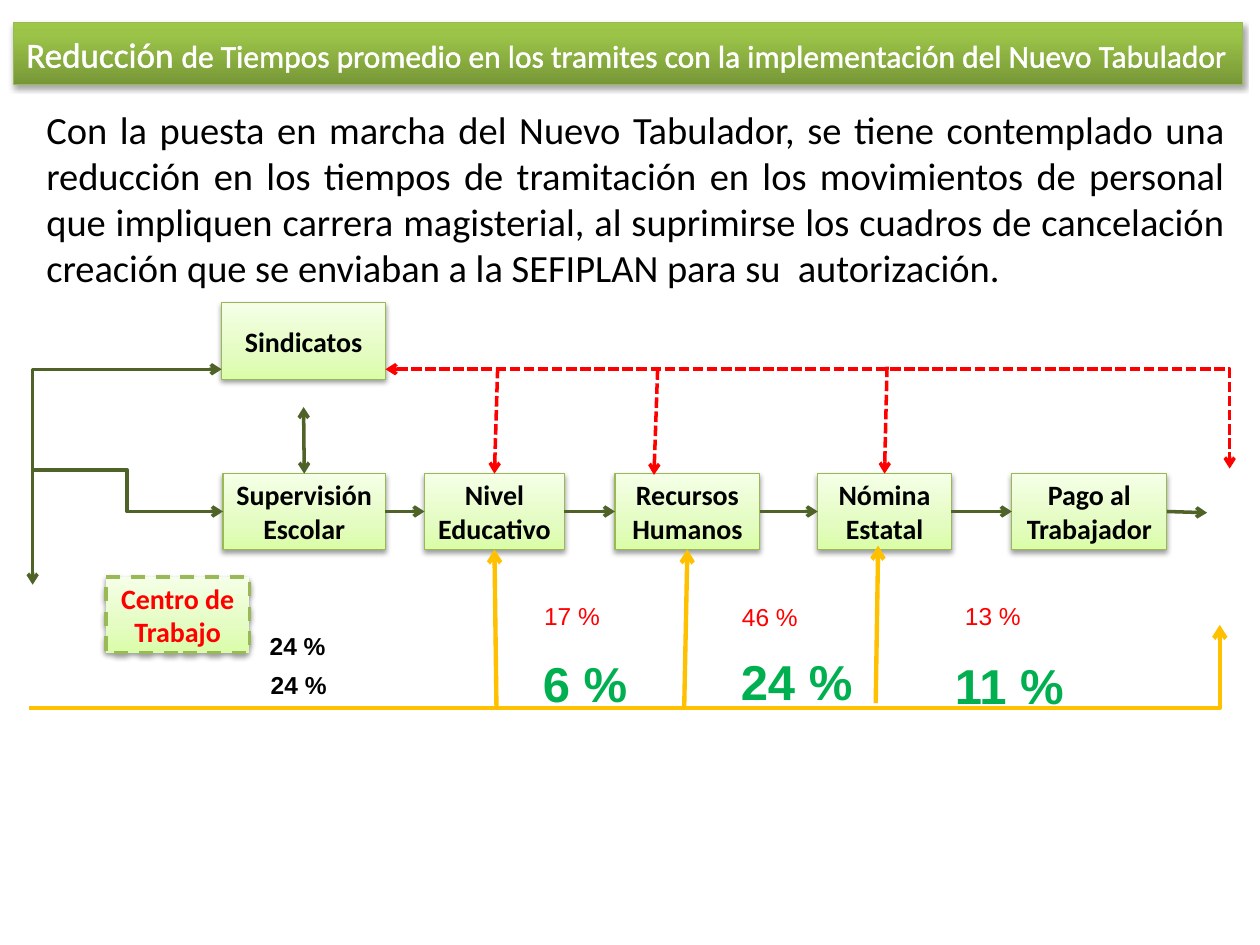
from lxml import etree
from pptx import Presentation
from pptx.dml.color import RGBColor
from pptx.enum import dml, shapes, text
from pptx.oxml import ns
from pptx.util import Pt

COLORS = {
    "black": "000000", "white": "FFFFFF", "red": "FF0000", "green": "00B050",
    "olive": "4F6228", "amber": "FFC000", "border": "98B955",
}
PALE = [(0, "DAFDA7"), (35, "E4FCC2"), (100, "F5FFE7")]
DEEP = [(0, "779737"), (80, "9BC348"), (100, "9DC746")]
TOP, LEFT, BOTTOM, RIGHT = range(4)


def rgb(name):
    return RGBColor.from_string(COLORS[name])


def add_element(parent, tag, **attributes):
    return etree.SubElement(parent, ns.qn(tag), attributes)


def add_color(parent, value, alpha=None):
    color = add_element(parent, "a:srgbClr", val=value)
    if alpha is not None:
        add_element(color, "a:alpha", val=str(alpha * 1000))


def add_span(para, words, size, color, font="Calibri", bold=False):
    span = para.add_run()
    span.text = words
    span.font.size = Pt(size)
    span.font.name = font
    span.font.bold = bold
    span.font.color.rgb = rgb(color)
    return span


def add_text(page, box, words, size, color, font="Arial", bold=False):
    frame = page.shapes.add_textbox(*map(Pt, box)).text_frame
    frame.word_wrap = True
    para = frame.paragraphs[0]
    add_span(para, words, size, color, font, bold)
    return para


def add_panel(page, box, stops, alpha, distance):
    panel = page.shapes.add_shape(shapes.MSO_SHAPE.RECTANGLE, *map(Pt, box))
    panel.fill.gradient()
    panel.fill.gradient_angle = 90
    properties = panel._element.spPr
    stop_list = properties.find(".//" + ns.qn("a:gsLst"))
    stop_list.clear()
    for position, value in stops:
        add_color(add_element(stop_list, "a:gs", pos=str(position * 1000)), value)
    panel.line.color.rgb = rgb("border")
    panel.line.width = Pt(0.75)
    panel.shadow.inherit = False
    shadow = add_element(
        properties.find(ns.qn("a:effectLst")), "a:outerShdw",
        blurRad=str(Pt(3.1)), dist=str(Pt(distance)), dir="5400000", rotWithShape="0")
    add_color(shadow, COLORS["black"], alpha)
    panel.text_frame.vertical_anchor = text.MSO_ANCHOR.MIDDLE
    return panel


def add_node(page, box, words, color="black"):
    node = add_panel(page, box, PALE, 38, 1.6)
    node.text_frame.word_wrap = True
    para = node.text_frame.paragraphs[0]
    para.alignment = text.PP_ALIGN.CENTER
    add_span(para, words, 16, color, bold=True)
    return node


def add_arrow(page, start, end, color, width=2, dashed=False, both=False, preset=None):
    kind = shapes.MSO_CONNECTOR.ELBOW if preset else shapes.MSO_CONNECTOR.STRAIGHT
    arrow = page.shapes.add_connector(kind, *map(Pt, (*start, *end)))
    arrow.line.color.rgb = rgb(color)
    arrow.line.width = Pt(width)
    if dashed:
        arrow.line.dash_style = dml.MSO_LINE.SQUARE_DOT
    properties = arrow._element.spPr
    if preset:
        properties.find(ns.qn("a:prstGeom")).set("prst", preset)
    outline = properties.find(ns.qn("a:ln"))
    if both:
        add_element(outline, "a:headEnd", type="arrow")
    add_element(outline, "a:tailEnd", type="arrow")
    add_element(properties, "a:effectLst")
    return arrow


def draw_heading(page, box):
    banner = add_panel(page, box, DEEP, 35, 1.8)
    banner.text_frame.word_wrap = False
    para = banner.text_frame.paragraphs[0]
    para.alignment = text.PP_ALIGN.LEFT
    first = add_span(para, "Reducción ", 20, "white")
    second = add_span(
        para, "de Tiempos promedio en los tramites con la implementación del Nuevo Tabulador",
        18, "white")
    for span in (first, second):
        outline = etree.Element(ns.qn("a:ln"), w=str(Pt(1.45)))
        add_color(add_element(outline, "a:solidFill"), COLORS["white"])
        span.font._element.insert(0, outline)


def draw_intro(page, box):
    para = add_text(
        page, box,
        "Con la puesta en marcha del Nuevo Tabulador, se tiene contemplado una reducción "
        "en los tiempos de tramitación en los movimientos de personal que impliquen "
        "carrera magisterial, al suprimirse los cuadros de cancelación creación que se "
        "enviaban a la SEFIPLAN para su  autorización.",
        22, "black", "Calibri")
    para.alignment = text.PP_ALIGN.JUSTIFY


def draw_flow(page, box):
    left, top = box[:2]

    def at(x, y):
        return left + x, top + y

    add_node(page, (*at(110.7, 0.8), 93.6, 43.9), "Sindicatos")
    center = add_node(page, (*at(44.5, 157.8), 82.1, 43.2), "Centro de Trabajo", "red")
    center.line.width = Pt(2)
    center.line.dash_style = dml.MSO_LINE.DASH

    steps = [
        add_node(page, (*at(x, 98.7), width, 43.2), words)
        for x, width, words in (
            (111.4, 92.9, "Supervisión Escolar"), (226.6, 79.9, "Nivel Educativo"),
            (335.4, 82.8, "Recursos Humanos"), (451.3, 76.3, "Nómina Estatal"),
            (562.2, 88.6, "Pago al Trabajador"))
    ]
    supervision, level, resources, payroll, payment = steps

    add_arrow(page, at(110.7, 39), at(2.7, 162.1), "olive", both=True, preset="bentConnector2")
    add_arrow(page, at(2, 96.6), at(111.4, 120.3), "olive", preset="bentConnector3")
    union_link = add_arrow(page, at(157.5, 60.6), at(157.8, 98.7), "olive", both=True)
    union_link.end_connect(supervision, TOP)
    for before, after in zip(steps, steps[1:]):
        link = add_arrow(page, at(0, 0), at(1, 1), "olive")
        link.begin_connect(before, RIGHT)
        link.end_connect(after, LEFT)
    last_link = add_arrow(page, at(650.8, 120.3), at(673.8, 121), "olive")
    last_link.begin_connect(payment, RIGHT)

    add_arrow(page, at(204.3, 39), at(686.7, 95.8), "red", dashed=True, both=True,
              preset="bentConnector2")
    add_arrow(page, at(359.8, 39), at(357.7, 99.4), "red", dashed=True)
    for start, step in (((268.4, 38.2), level), ((490.9, 37.5), payroll)):
        drop = add_arrow(page, at(*start), at(*start), "red", dashed=True)
        drop.end_connect(step, TOP)

    add_arrow(page, at(0.6, 232.6), at(681, 185.1), "amber", 2.5, preset="bentConnector2")
    add_arrow(page, at(484.4, 229.8), at(485.8, 139.8), "amber", 2.5)
    for x, step in ((267.7, level), (375, resources)):
        rise = add_arrow(page, at(x, 231.9), at(x, 141.9), "amber", 2.5)
        rise.end_connect(step, BOTTOM)


def draw_percentages(page, box):
    left, top = box[:2]
    styles = {
        "common": (24.5, 14, "black", True),
        "before": (24.5, 14, "red", False),
        "after": (41, 28, "green", True),
    }
    for x, y, width, words, style in (
            (0, 18, 62, "24 %", "common"), (0.6, 40.4, 62, "24 %", "common"),
            (156.8, 0.8, 73.4, "17 %", "before"), (269.9, 1.6, 76.3, "46 %", "before"),
            (397.3, 0.8, 81.4, "13 %", "before"), (156.1, 31.1, 73.4, "6 %", "after"),
            (269.2, 29.6, 102.2, "24 %", "after"), (391.6, 31.8, 81.4, "11 %", "after")):
        height, size, color, bold = styles[style]
        add_text(page, (left + x, top + y, width, height), words, size, color, bold=bold)


def main():
    deck = Presentation()
    deck.slide_width, deck.slide_height = Pt(720), Pt(540)
    page = deck.slides.add_slide(deck.slide_layouts[6])
    draw_heading(page, (7.9, 13, 702, 35.3))
    draw_intro(page, (19.4, 56.9, 687.6, 113.8))
    draw_flow(page, (16, 172, 690, 234))
    draw_percentages(page, (147, 339, 480, 73))
    deck.save("out.pptx")


if __name__ == "__main__":
    main()
